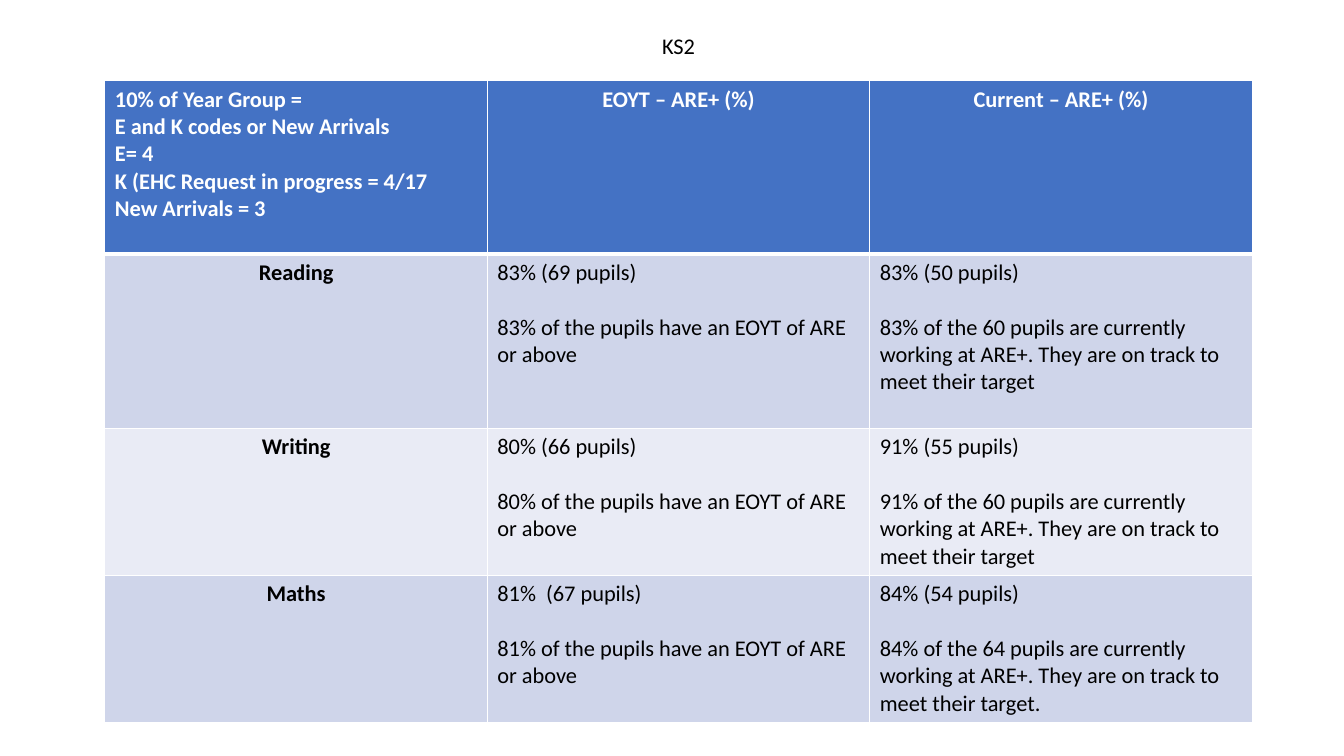
"""Build the KS2 attainment slide: a heading over a table of subjects."""
from lxml.etree import SubElement
from pptx import Presentation
from pptx.dml.color import RGBColor
from pptx.enum.text import MSO_ANCHOR, PP_ALIGN
from pptx.oxml.ns import qn
from pptx.util import Inches, Pt

COLOURS = {"header": "4472C4", "odd": "CFD5EA", "even": "E9EBF5",
           "white": "FFFFFF", "black": "000000"}
LEFT, WIDTH = 1.04, 11.38
TITLE_TOP, TITLE_HEIGHT, TABLE_TOP = 0.15, 0.64, 0.8
ROW_HEIGHTS = [1.72, 1.73, 1.46, 1.46]
GAP = 19.5

HEADER = [
    ["10% of Year Group =", "E and K codes or New Arrivals", "E= 4",
     "K (EHC Request in progress = 4/17", "New Arrivals = 3"],
    ["EOYT – ARE+ (%)"],
    ["Current – ARE+ (%)"],
]
TARGET = "{} of the pupils have an EOYT of ARE or above"
CURRENT = ("{} of the {} pupils are currently working at ARE+. "
           "They are on track to meet their target{}")
SUBJECTS = [
    ("Reading", "83%", " (69 pupils)", "83%", " (50 pupils)", 60, ""),
    ("Writing", "80%", " (66 pupils)", "91%", " (55 pupils)", 60, ""),
    ("Maths", "81%", "  (67 pupils)", "84%", " (54 pupils)", 64, "."),
]


def write(frame, lines, colour="black", bold=False, centred=False, gap=0, spacing=1.0):
    frame.word_wrap = True
    for index, line in enumerate(lines):
        paragraph = frame.add_paragraph() if index else frame.paragraphs[0]
        paragraph.alignment = PP_ALIGN.CENTER if centred else PP_ALIGN.LEFT
        paragraph.line_spacing = spacing
        paragraph.space_before = Pt(gap if index else 0)
        run = paragraph.add_run()
        run.text = line
        run.font.name = "Calibri"
        run.font.size = Pt(16)
        run.font.bold = bold
        run.font.color.rgb = RGBColor.from_string(COLOURS[colour])


def style_cell(cell, fill, bottom=1, top=1):
    properties = cell._tc.get_or_add_tcPr()
    for side, points in (("L", 1), ("R", 1), ("T", top), ("B", bottom)):
        border = SubElement(properties, qn(f"a:ln{side}"), w=str(Pt(points)))
        SubElement(SubElement(border, qn("a:solidFill")), qn("a:srgbClr"),
                   val=COLOURS["white"])
    cell.fill.solid()
    cell.fill.fore_color.rgb = RGBColor.from_string(COLOURS[fill])


def add_title(slide, text):
    title = slide.shapes.add_textbox(Inches(LEFT), Inches(TITLE_TOP),
                                     Inches(WIDTH), Inches(TITLE_HEIGHT))
    title.text_frame.vertical_anchor = MSO_ANCHOR.MIDDLE
    write(title.text_frame, [text], centred=True, spacing=0.9)


def add_results(slide):
    results = slide.shapes.add_table(
        len(ROW_HEIGHTS), len(HEADER), Inches(LEFT), Inches(TABLE_TOP),
        Inches(WIDTH), Inches(sum(ROW_HEIGHTS))).table
    for row, height in zip(results.rows, ROW_HEIGHTS):
        row.height = Inches(height)
    for column, lines in enumerate(HEADER):
        heading = results.cell(0, column)
        style_cell(heading, "header", bottom=3)
        write(heading.text_frame, lines, colour="white", bold=True, centred=column > 0)
    for row, subject in enumerate(SUBJECTS, start=1):
        name, target, target_pupils, current, current_pupils, total, stop = subject
        entries = [
            [name],
            [target + target_pupils, TARGET.format(target)],
            [current + current_pupils, CURRENT.format(current, total, stop)],
        ]
        for column, lines in enumerate(entries):
            entry = results.cell(row, column)
            style_cell(entry, "odd" if row % 2 else "even", top=3 if row == 1 else 1)
            is_name = column == 0
            write(entry.text_frame, lines, bold=is_name, centred=is_name, gap=GAP)


def main():
    deck = Presentation()
    deck.slide_width, deck.slide_height = Inches(13.33), Inches(7.5)
    slide = deck.slides.add_slide(deck.slide_layouts[6])
    add_title(slide, "KS2")
    add_results(slide)
    deck.save("out.pptx")


if __name__ == "__main__":
    main()
